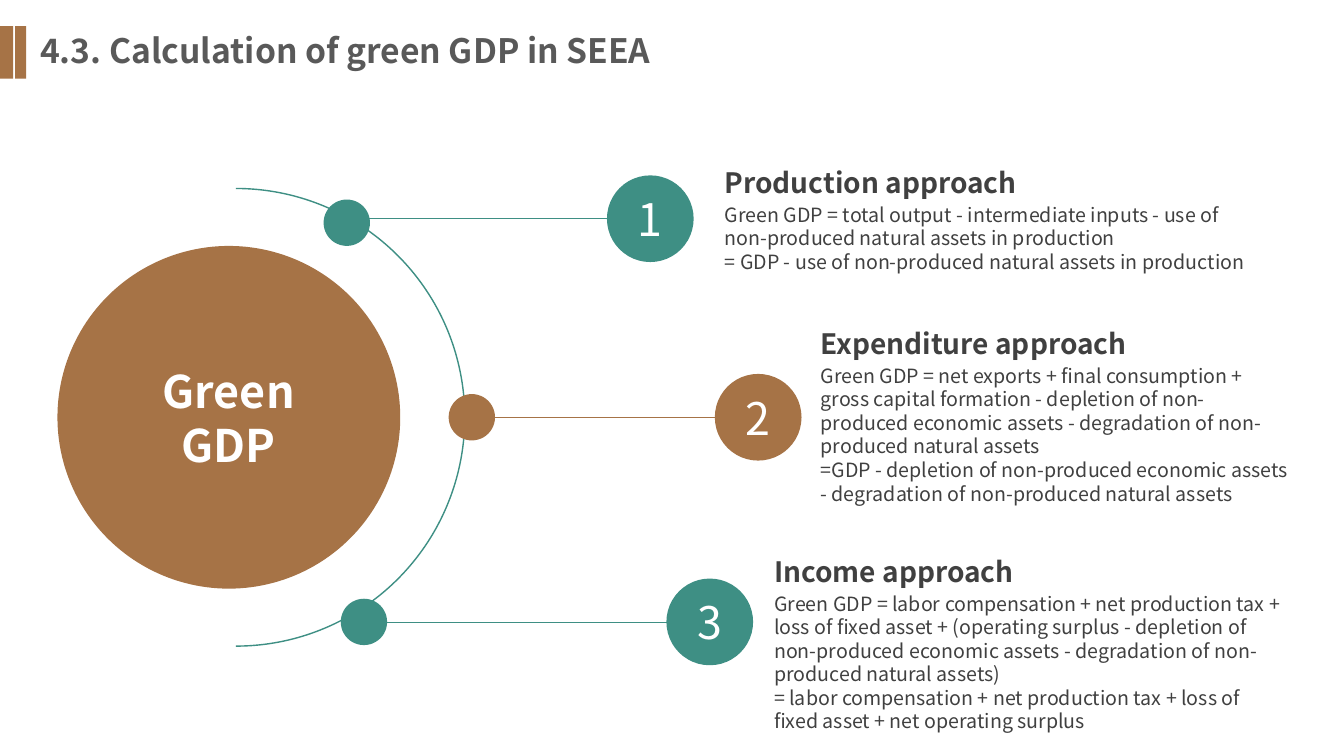
from dataclasses import dataclass

from lxml import etree
from pptx import Presentation
from pptx import util as u
from pptx.dml.color import RGBColor
from pptx.enum import shapes, text
from pptx.oxml.ns import qn

PX = 9144  # EMU per px, 100 px to the inch


@dataclass(frozen=True)
class Theme:
    font: str = "Noto Sans CJK SC"
    brown: str = "A67346"
    teal: str = "3E8F84"
    white: str = "FFFFFF"
    title: str = "595959"
    ink: str = "404040"
    title_size: int = 24
    label_size: int = 32
    heading_size: int = 20
    body_size: int = 14


T = Theme()
BADGE, DOT = 86, 46
HEADING_H, BODY_DROP = 44, 37

# colour, dot left/top, badge left/top, text left/top, heading width,
# body width/height, heading, body paragraphs
APPROACHES = [
    (T.teal, (321, 198), (602, 174), (709, 159), 360, (547, 104),
     "Production approach",
     ["Green GDP = total output - intermediate inputs - use of "
      "non-produced natural assets in production",
      "= GDP - use of non-produced natural assets in production"]),
    (T.brown, (445, 391), (709, 371), (804, 319), 438, (485, 175),
     "Expenditure approach",
     ["Green GDP = net exports + final consumption + gross capital formation "
      "- depletion of non-produced economic assets "
      "- degradation of non-produced natural assets",
      "=GDP - depletion of non-produced economic assets "
      "- degradation of non-produced natural assets"]),
    (T.teal, (338, 594), (661, 574), (758, 545), 371, (530, 151),
     "Income approach",
     ["Green GDP = labor compensation + net production tax + loss of fixed asset "
      "+ (operating surplus - depletion of non-produced economic assets "
      "- degradation of non-produced natural assets)",
      "= labor compensation + net production tax + loss of fixed asset "
      "+ net operating surplus"]),
]


def px(*values):
    return [u.Emu(v * PX) for v in values]


def rgb(color):
    return RGBColor.from_string(color)


def write(tf, paragraphs, size, color, bold=False, align=text.PP_ALIGN.LEFT):
    tf.word_wrap = True
    for i, line in enumerate(paragraphs):
        p = tf.paragraphs[0] if i == 0 else tf.add_paragraph()
        p.alignment = align
        r = p.add_run()
        r.text = line
        r.font.name, r.font.size, r.font.bold = T.font, u.Pt(size), bold
        r.font.color.rgb = rgb(color)


def text_box(slide, box, paragraphs, **style):
    tf = slide.shapes.add_textbox(*px(*box)).text_frame
    tf.auto_size = text.MSO_AUTO_SIZE.SHAPE_TO_FIT_TEXT
    write(tf, paragraphs, **style)


def solid(slide, kind, box, color, label=None, bold=False):
    sp = slide.shapes.add_shape(kind, *px(*box))
    sp.shadow.inherit = False
    sp.fill.solid()
    sp.fill.fore_color.rgb = rgb(color)
    sp.line.fill.background()
    if label:
        sp.text_frame.vertical_anchor = text.MSO_ANCHOR.MIDDLE
        write(sp.text_frame, [label], T.label_size, T.white, bold,
              text.PP_ALIGN.CENTER)


def half_ring(slide, box, color):
    sp = slide.shapes.add_shape(shapes.MSO_SHAPE.ARC, *px(*box))
    sp.shadow.inherit = False
    sp.adjustments[0], sp.adjustments[1] = 162, 54  # top to bottom, clockwise
    sp.fill.background()
    sp.line.color.rgb = rgb(color)
    sp.line.width = u.Pt(1)


def rule(slide, x1, x2, y, color):
    line = slide.shapes.add_connector(shapes.MSO_CONNECTOR.STRAIGHT,
                                      *px(x1, y, x2, y))
    line.line.color.rgb = rgb(color)
    line.line.width = u.Pt(0.5)
    etree.SubElement(line._element.spPr, qn("a:effectLst"))


def approach(slide, number, color, dot, badge, corner, heading_w, body_size,
             heading, body):
    oval = shapes.MSO_SHAPE.OVAL
    rule(slide, dot[0] + DOT // 2, badge[0] + BADGE // 2,
         badge[1] + BADGE // 2, color)
    solid(slide, oval, (*badge, BADGE, BADGE), color, str(number))
    solid(slide, oval, (*dot, DOT, DOT), color)
    x, y = corner
    text_box(slide, (x, y + BODY_DROP, *body_size), body,
             size=T.body_size, color=T.ink)
    text_box(slide, (x, y, heading_w, HEADING_H), [heading],
             size=T.heading_size, color=T.ink, bold=True)


def main():
    prs = Presentation()
    prs.slide_width, prs.slide_height = px(1333, 750)
    slide = prs.slides.add_slide(prs.slide_layouts[6])

    # Title and its two bars
    text_box(slide, (30, 25, 795, 50), ["4.3. Calculation of green GDP in SEEA"],
             size=T.title_size, color=T.title, bold=True)
    for x, w in ((0, 13), (15, 11)):
        solid(slide, shapes.MSO_SHAPE.RECTANGLE, (x, 26, w, 52), T.brown)

    # Hub and half ring
    half_ring(slide, (7, 187, 454, 454), T.teal)
    solid(slide, shapes.MSO_SHAPE.OVAL, (57, 244, 340, 340), T.brown,
          "Green GDP", bold=True)

    # The three approaches
    for number, row in enumerate(APPROACHES, 1):
        approach(slide, number, *row)

    prs.save("out.pptx")


if __name__ == "__main__":
    main()
